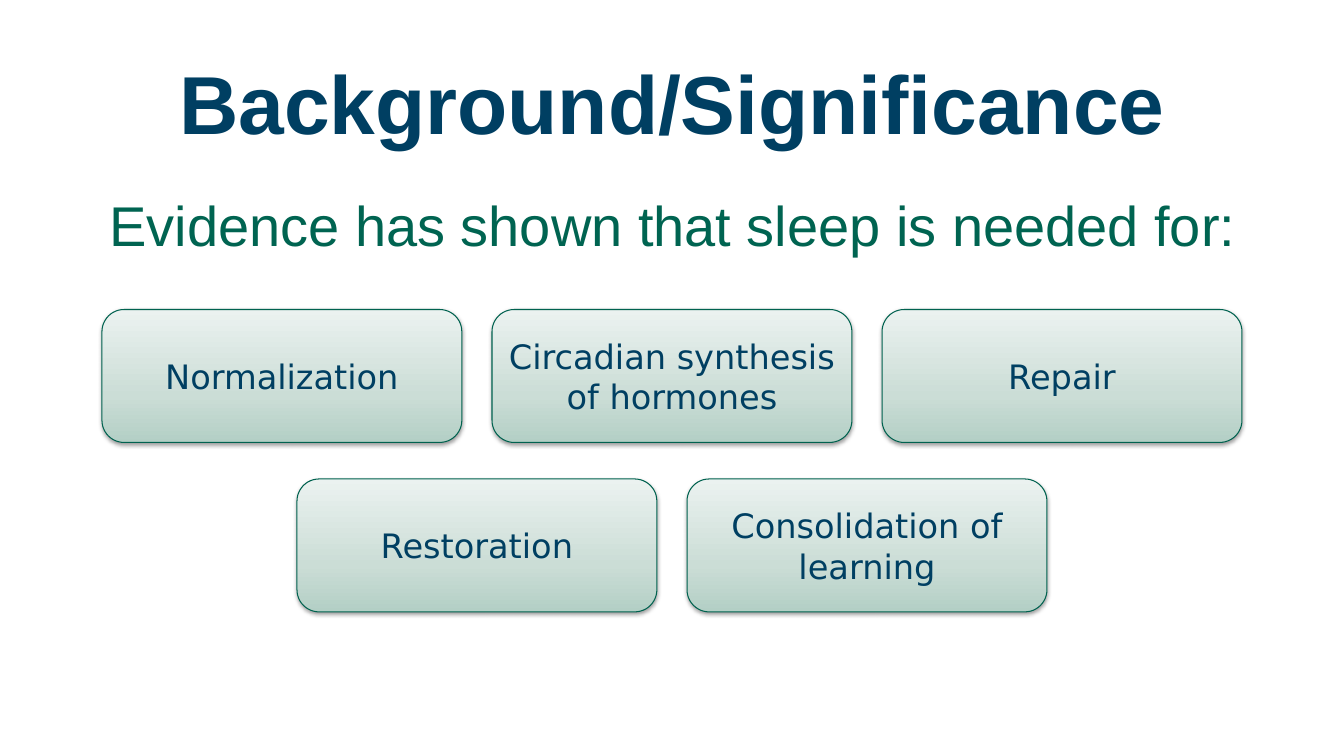
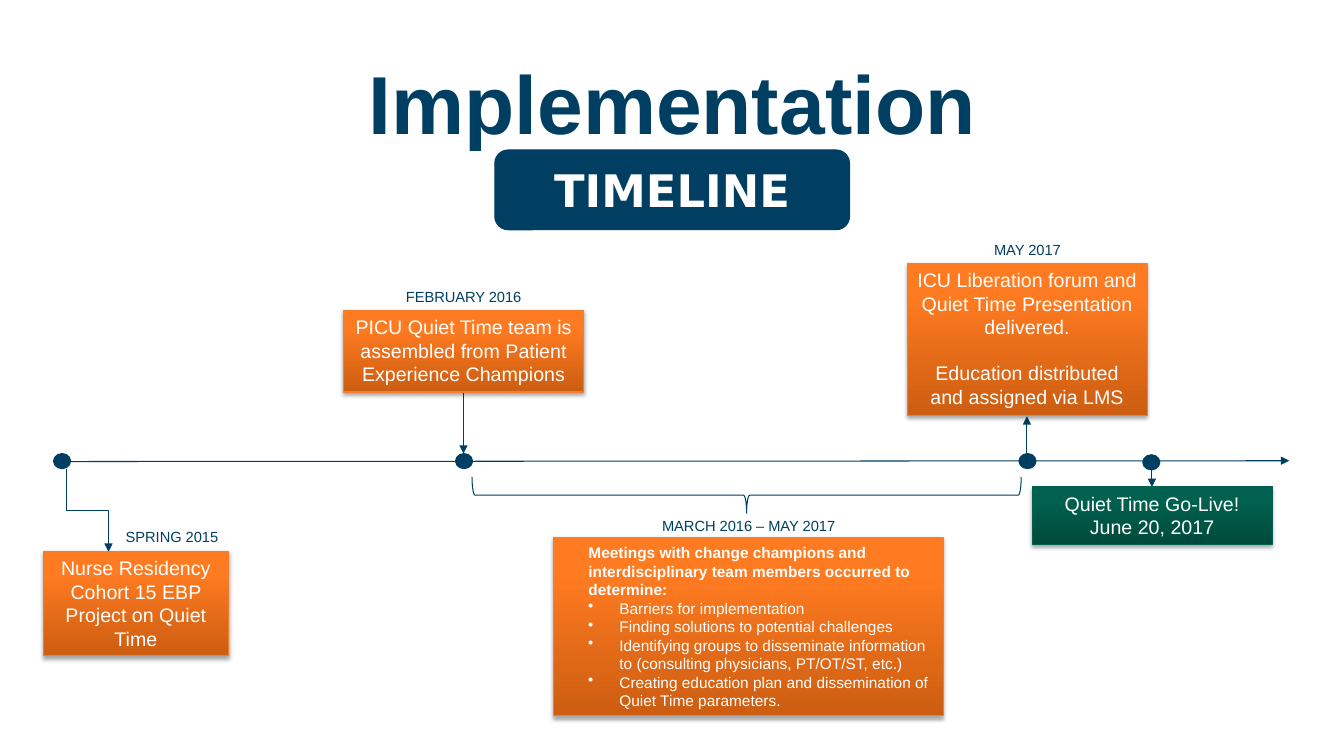
from lxml.etree import SubElement
from pptx import Presentation
from pptx.dml.color import RGBColor
from pptx.enum.shapes import MSO_CONNECTOR as LINK, MSO_SHAPE as GEOM
from pptx.enum.text import MSO_ANCHOR as ANCHOR, MSO_AUTO_SIZE as FIT, PP_ALIGN as ALIGN
from pptx.oxml.ns import qn
from pptx.util import Cm, Pt

NAVY, GREEN, WHITE = "003F62", "006451", "FFFFFF"
PINE, RUST = "00624F", "F47E2E"

# Card looks: gradient stops from bottom to top, line, shadow opacity and distance
MINT = dict(stops=[(0, "B3CFC5"), (35, "CBDDD6"), (100, "EBF2F0")], line=PINE, dark=38, dist=1.6)
ORANGE = dict(stops=[(0, "CC5D11"), (80, "FF7B21"), (100, "FF7B22")], line=RUST, dark=35, dist=1.8)
FOREST = dict(stops=[(0, "004B3C"), (80, "00614E"), (100, "00614F")], line=PINE, dark=35, dist=1.8)

# Text looks
HEAD = dict(name="Arial", size=Pt(58.7), bold=True, color=NAVY)
LEAD = dict(name="Arial", size=Pt(40), color=GREEN)
NEED = dict(name="DejaVu Sans", size=Pt(24), color=NAVY)
BADGE = dict(name="DejaVu Sans", size=Pt(32), bold=True, color=WHITE)
EVENT = dict(name="Arial", size=Pt(14), color=WHITE)
DATE = dict(name="Arial", size=Pt(10.5), color=NAVY)
NOTE = dict(name="Arial", size=Pt(11), color=WHITE)

NEEDS = [
    ["Normalization", "Circadian synthesis of hormones", "Repair"],
    ["Restoration", "Consolidation of learning"],
]

# Lengths below are in centimetres
EVENTS = [
    ((1.09, 13.89, 4.67, 2.64), ORANGE, 0,
     ["Nurse Residency Cohort 15 EBP Project on Quiet Time"]),
    ((8.66, 7.82, 6.05, 2.06), ORANGE, 0,
     ["PICU Quiet Time team is assembled from Patient Experience Champions"]),
    ((22.86, 6.63, 6.05, 3.84), ORANGE, 16,
     ["ICU Liberation forum and Quiet Time Presentation delivered.",
      "Education distributed and assigned via LMS"]),
    ((26.01, 12.27, 6.05, 1.45), FOREST, 0,
     ["Quiet Time Go-Live!", "June 20, 2017"]),
]
DATES = [
    ((2.92, 13.18, 3), ALIGN.LEFT, "SPRING 2015"),
    ((9.98, 7.14, 3.89), ALIGN.LEFT, "FEBRUARY 2016"),
    ((23.95, 5.94, 3.89), ALIGN.CENTER, "MAY 2017"),
    ((16.18, 12.9, 5.38), ALIGN.CENTER, "MARCH 2016 – MAY 2017"),
]
DOTS = [(1.35, 11.43), (11.48, 11.43), (25.68, 11.43), (28.8, 11.46)]
ARROWS = [
    (1.45, 11.63, 32.49, 11.61),
    (11.68, 9.88, 11.68, 11.43),
    (25.88, 11.43, 25.88, 10.49),
    (29.03, 11.84, 29.03, 12.27),
]
MEETING = "Meetings with change champions and interdisciplinary team members occurred to determine:"
TOPICS = [
    "Barriers for implementation",
    "Finding solutions to potential challenges",
    "Identifying groups to disseminate information to (consulting physicians, PT/OT/ST, etc.)",
    "Creating education plan and dissemination of Quiet Time parameters.",
]


def rgb(code):
    return RGBColor.from_string(code)


def cms(vals):
    return [Cm(v) for v in vals]


def place(shape, box):
    for key, val in zip(("left", "top", "width", "height"), cms(box)):
        setattr(shape, key, val)


def write(shape, texts, look, align=ALIGN.CENTER, anchor=ANCHOR.TOP, gap=0):
    """Fill a shape with paragraphs in one look and return its text frame."""
    frame = shape.text_frame
    frame.word_wrap, frame.auto_size = True, FIT.NONE
    frame.vertical_anchor = anchor
    for i, text in enumerate(texts):
        para = frame.add_paragraph() if i else frame.paragraphs[0]
        para.alignment = align
        if i and gap:
            para.space_before = Pt(gap)
        run = para.add_run()
        run.text = text
        for key, val in look.items():
            if key == "color":
                run.font.color.rgb = rgb(val)
            else:
                setattr(run.font, key, val)
    return frame


def indent(para, left, first=0, bullet=None):
    props = para._p.get_or_add_pPr()
    props.set("marL", str(Cm(left)))
    props.set("indent", str(Cm(first)))
    if bullet:
        SubElement(props, qn("a:buChar"), char=bullet)
    else:
        SubElement(props, qn("a:buNone"))


def outline(line, color):
    line.color.rgb = rgb(color)
    line.width = Pt(0.75)


def draw(slide, geom, box, fill=None, line=NAVY):
    shape = slide.shapes.add_shape(geom, *cms(box))
    shape.shadow.inherit = False
    if fill:
        shape.fill.solid()
        shape.fill.fore_color.rgb = rgb(fill)
    else:
        shape.fill.background()
    outline(shape.line, line)
    return shape


def tint(parent, code):
    return SubElement(parent, qn("a:srgbClr"), val=code)


def card(slide, geom, box, style):
    """Draw a shape with a vertical gradient and a soft shadow below."""
    shape = draw(slide, geom, box, line=style["line"])
    shape.fill.gradient()
    shape.fill.gradient_angle = 90
    props = shape._element.spPr
    stops = props.find(qn("a:gradFill")).find(qn("a:gsLst"))
    for old in list(stops):
        stops.remove(old)
    for pos, code in style["stops"]:
        tint(SubElement(stops, qn("a:gs"), pos=str(pos * 1000)), code)
    shade = SubElement(props.find(qn("a:effectLst")), qn("a:outerShdw"),
                       blurRad=str(Pt(3.1)), dist=str(Pt(style["dist"])),
                       dir="5400000", rotWithShape="0")
    SubElement(tint(shade, "000000"), qn("a:alpha"), val=str(style["dark"] * 1000))
    return shape


def arrow(slide, ends, kind=LINK.STRAIGHT):
    link = slide.shapes.add_connector(kind, *cms(ends))
    outline(link.line, NAVY)
    SubElement(link.line._get_or_add_ln(), qn("a:tailEnd"), type="triangle")
    SubElement(link._element.spPr, qn("a:effectLst"))
    return link


def begin(deck, layout, title):
    slide = deck.slides.add_slide(deck.slide_layouts[layout])
    place(slide.shapes.title, (1.7, 0.76, 30.48, 3.18))
    write(slide.shapes.title, [title], HEAD, anchor=ANCHOR.BOTTOM)
    return slide


def background(deck):
    slide = begin(deck, 1, "Background/Significance")
    body = slide.placeholders[1]
    place(body, (1.7, 4.45, 30.48, 11.86))
    frame = write(body, ["Evidence has shown that sleep is needed for:"], LEAD)
    frame.margin_top = Cm(0.34)
    frame.paragraphs[0].space_before = Pt(0)
    indent(frame.paragraphs[0], 0)

    wide, high, step = 9.07, 3.35, 9.83
    for row, names in enumerate(NEEDS):
        left = (33.87 - wide - step * (len(names) - 1)) / 2
        for col, name in enumerate(names):
            box = (left + col * step, 7.8 + row * 4.27, wide, high)
            shape = card(slide, GEOM.ROUNDED_RECTANGLE, box, MINT)
            frame = write(shape, [name], NEED, anchor=ANCHOR.MIDDLE)
            frame.margin_left = frame.margin_right = Cm(0.13)


def timeline(deck):
    slide = begin(deck, 5, "Implementation")
    for ends in ARROWS:
        arrow(slide, ends)
    elbow = arrow(slide, (3.25, 12.34, 1.17, 13.39), LINK.ELBOW)
    elbow._element.spPr.find(qn("a:xfrm")).set("rot", "16200000")
    for spot in DOTS:
        draw(slide, GEOM.OVAL, (*spot, 0.43, 0.38), NAVY)
    brace = draw(slide, GEOM.RIGHT_BRACE, (18.36, 5.56, 0.91, 13.84))
    brace.rotation = 90

    for box, style, gap, texts in EVENTS:
        write(card(slide, GEOM.RECTANGLE, box, style), texts, EVENT, gap=gap)
    for box, align, text in DATES:
        write(slide.shapes.add_textbox(*cms((*box, 0.71))), [text], DATE, align)

    panel = card(slide, GEOM.RECTANGLE, (13.94, 13.54, 9.83, 4.5), ORANGE)
    frame = write(panel, [MEETING, *TOPICS], NOTE, ALIGN.LEFT, ANCHOR.MIDDLE)
    intro, *points = frame.paragraphs
    intro.runs[0].font.bold = True
    indent(intro, 0.64)
    for point in points:
        indent(point, 1.42, -0.79, "•")

    badge = draw(slide, GEOM.ROUNDED_RECTANGLE, (12.47, 3.78, 8.94, 2.01), NAVY)
    write(badge, ["TIMELINE"], BADGE, anchor=ANCHOR.MIDDLE)


def main():
    deck = Presentation()
    deck.slide_width, deck.slide_height = Cm(33.87), Cm(19.05)
    background(deck)
    timeline(deck)
    deck.save("out.pptx")


if __name__ == "__main__":
    main()
